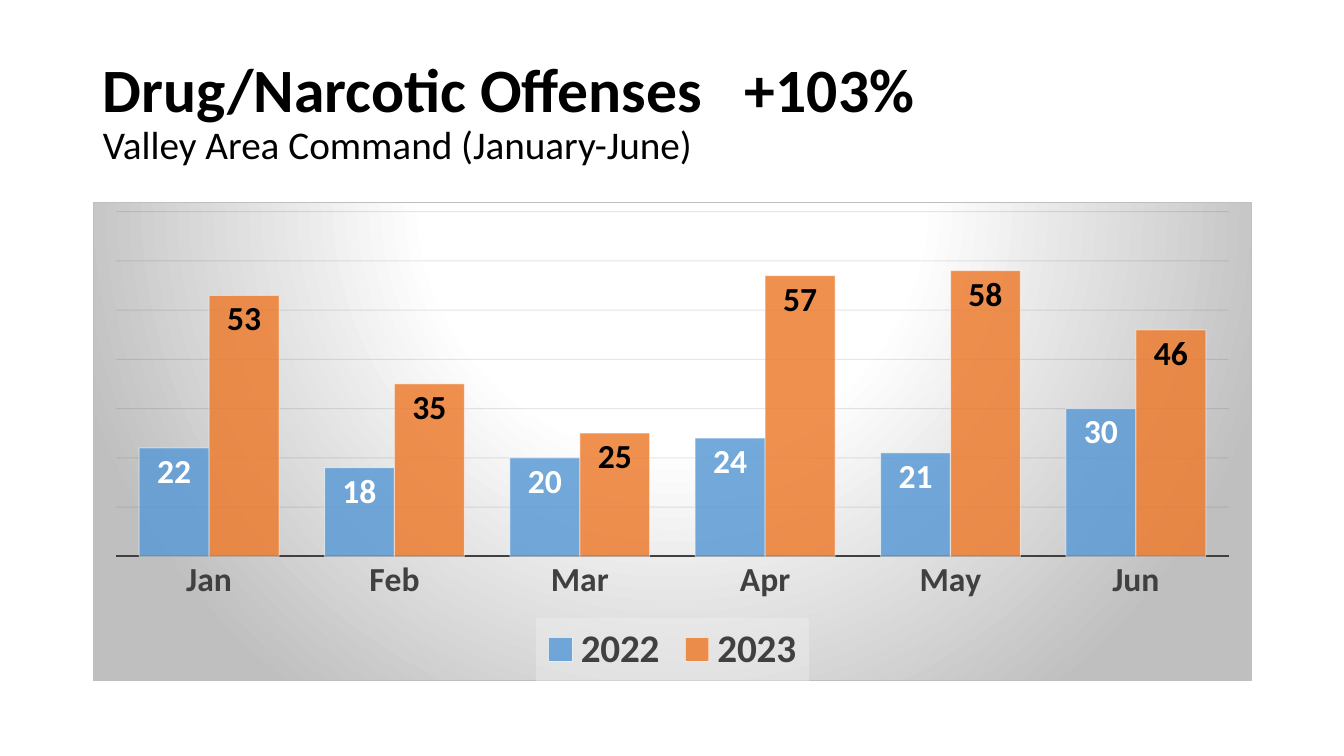
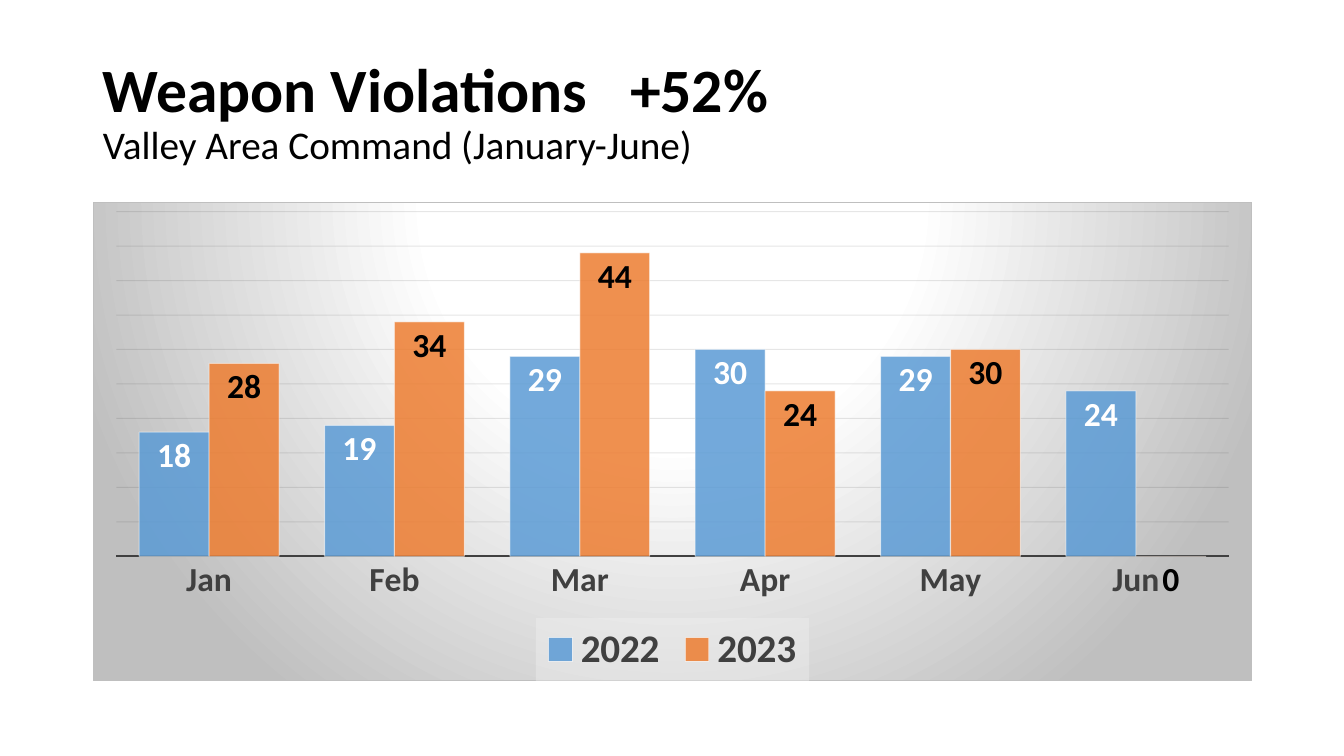
from lxml import etree
from pptx import Presentation
from pptx import util as u
from pptx.chart.data import CategoryChartData
from pptx.dml.color import RGBColor
from pptx.enum import chart as ch, text
from pptx.oxml import parse_xml
from pptx.oxml.ns import nsdecls, qn

FONT = "Calibri"
COLORS = {
    "black": "000000",
    "white": "FFFFFF",
    "label": "404040",
    "grid": "0D0D0D",
    "edge": "BFBFBF",
    "legend": "F2F2F2",
    "2022": "5B9BD5",
    "2023": "ED7D31",
}
LABEL_COLORS = {"2022": "white", "2023": "black"}
MONTHS = ["Jan", "Feb", "Mar", "Apr", "May", "Jun"]
SUBTITLE = "Valley Area Command (January-June)"
LEFT, WIDTH = u.Inches(0.92), u.Inches(11.5)

SLIDES = [
    {
        "offense": "Drug/Narcotic Offenses",
        "change": "+103%",
        "counts": {"2022": [22, 18, 20, 24, 21, 30],
                   "2023": [53, 35, 25, 57, 58, 46]},
        "maximum": 70,
        "step": 10,
    },
    {
        "offense": "Weapon Violations",
        "change": "+52%",
        "counts": {"2022": [18, 19, 29, 30, 29, 24],
                   "2023": [28, 34, 44, 24, 30, 0]},
        "maximum": 50,
        "step": 5,
    },
]


def rgb(name):
    return RGBColor.from_string(COLORS[name])


def style_font(font, size, color, bold):
    font.name = FONT
    font.size = u.Pt(size)
    font.bold = bold
    font.color.rgb = rgb(color)


def style_line(line, color, width):
    line.color.rgb = rgb(color)
    line.width = u.Pt(width)


def set_opacity(shape_properties, color_path, percent):
    """Make the colour found under a c:spPr element partly transparent."""
    color = shape_properties.find("/".join(qn(tag) for tag in color_path.split("/")))
    etree.SubElement(color, qn("a:alpha")).set("val", str(percent * 1000))


def add_run(paragraph, words, size, bold):
    run = paragraph.add_run()
    run.text = words
    style_font(run.font, size, "black", bold)
    return run


def add_title(slide, offense, change):
    title = slide.shapes.title
    title.left, title.top = LEFT, u.Inches(0.4)
    title.width, title.height = WIDTH, u.Inches(1.45)
    frame = title.text_frame
    frame.word_wrap = True
    frame.auto_size = text.MSO_AUTO_SIZE.NONE
    frame.vertical_anchor = text.MSO_ANCHOR.MIDDLE
    paragraph = frame.paragraphs[0]
    paragraph.alignment = text.PP_ALIGN.LEFT
    paragraph.line_spacing = 0.9
    add_run(paragraph, offense, 44, True)
    gap = add_run(paragraph, " ", 44, True)
    gap._r.get_or_add_rPr().set("spc", "2000")
    add_run(paragraph, change, 44, True)
    paragraph.add_line_break()
    add_run(paragraph, SUBTITLE, 28, False)


def style_series(series):
    series.format.fill.solid()
    series.format.fill.fore_color.rgb = rgb(series.name)
    style_line(series.format.line, "white", 0.75)
    properties = series._element.find(qn("c:spPr"))
    set_opacity(properties, "a:solidFill/a:srgbClr", 85)
    set_opacity(properties, "a:ln/a:solidFill/a:srgbClr", 50)
    labels = series.data_labels
    labels.show_value = True
    labels.position = ch.XL_LABEL_POSITION.INSIDE_END
    style_font(labels.font, 24, LABEL_COLORS[series.name], True)


def style_axes(chart, maximum, step):
    months = chart.category_axis
    months.major_tick_mark = ch.XL_TICK_MARK.NONE
    months.minor_tick_mark = ch.XL_TICK_MARK.NONE
    months.has_major_gridlines = False
    style_font(months.tick_labels.font, 24, "label", True)
    style_line(months.format.line, "label", 1.5)

    counts = chart.value_axis
    counts.minimum_scale, counts.maximum_scale = 0, maximum
    counts.major_unit = step
    counts.has_major_gridlines = True
    style_line(counts.major_gridlines.format.line, "grid", 0.75)
    gridlines = counts._element.find(qn("c:majorGridlines"))
    set_opacity(gridlines.find(qn("c:spPr")), "a:ln/a:solidFill/a:srgbClr", 10)
    counts.visible = False


def add_legend(chart):
    chart.has_legend = True
    legend = chart.legend
    legend.position = ch.XL_LEGEND_POSITION.BOTTOM
    legend.include_in_layout = False
    style_font(legend.font, 28, "label", True)
    panel = parse_xml(
        f'<c:spPr {nsdecls("c", "a")}><a:solidFill>'
        f'<a:srgbClr val="{COLORS["legend"]}"><a:alpha val="39000"/></a:srgbClr>'
        "</a:solidFill></c:spPr>")
    legend._element.find(qn("c:txPr")).addprevious(panel)


def add_chart_background(chart):
    """Fill the chart area with a round gradient centred above it."""
    stops = "".join(
        f'<a:gs pos="{position * 1000}"><a:srgbClr val="{COLORS[color]}"/></a:gs>'
        for position, color in [(0, "white"), (39, "white"), (100, "edge")])
    background = parse_xml(
        f'<c:spPr {nsdecls("c", "a")}>'
        f'<a:gradFill><a:gsLst>{stops}</a:gsLst><a:path path="circle">'
        '<a:fillToRect l="50000" t="-80000" r="50000" b="180000"/></a:path></a:gradFill>'
        f'<a:ln w="{u.Pt(0.75)}"><a:solidFill><a:srgbClr val="{COLORS["edge"]}"/>'
        "</a:solidFill></a:ln></c:spPr>")
    chart._chartSpace.find(qn("c:chart")).addnext(background)


def add_monthly_chart(slide, counts, maximum, step):
    data = CategoryChartData()
    data.categories = MONTHS
    for year, values in counts.items():
        data.add_series(year, values)
    chart = slide.shapes.add_chart(
        ch.XL_CHART_TYPE.COLUMN_CLUSTERED, LEFT, u.Inches(2), WIDTH, u.Inches(4.76), data).chart
    chart.has_title = False
    style_font(chart.font, 10, "black", False)
    plot = chart.plots[0]
    plot.gap_width = 65
    plot.overlap = 0
    plot.vary_by_categories = False
    for series in plot.series:
        style_series(series)
    style_axes(chart, maximum, step)
    add_legend(chart)
    add_chart_background(chart)


def main():
    presentation = Presentation()
    presentation.slide_width = u.Inches(13.33)
    presentation.slide_height = u.Inches(7.5)
    title_only = presentation.slide_layouts[5]
    for content in SLIDES:
        slide = presentation.slides.add_slide(title_only)
        add_title(slide, content["offense"], content["change"])
        add_monthly_chart(slide, content["counts"], content["maximum"], content["step"])
    presentation.save("out.pptx")


if __name__ == "__main__":
    main()
